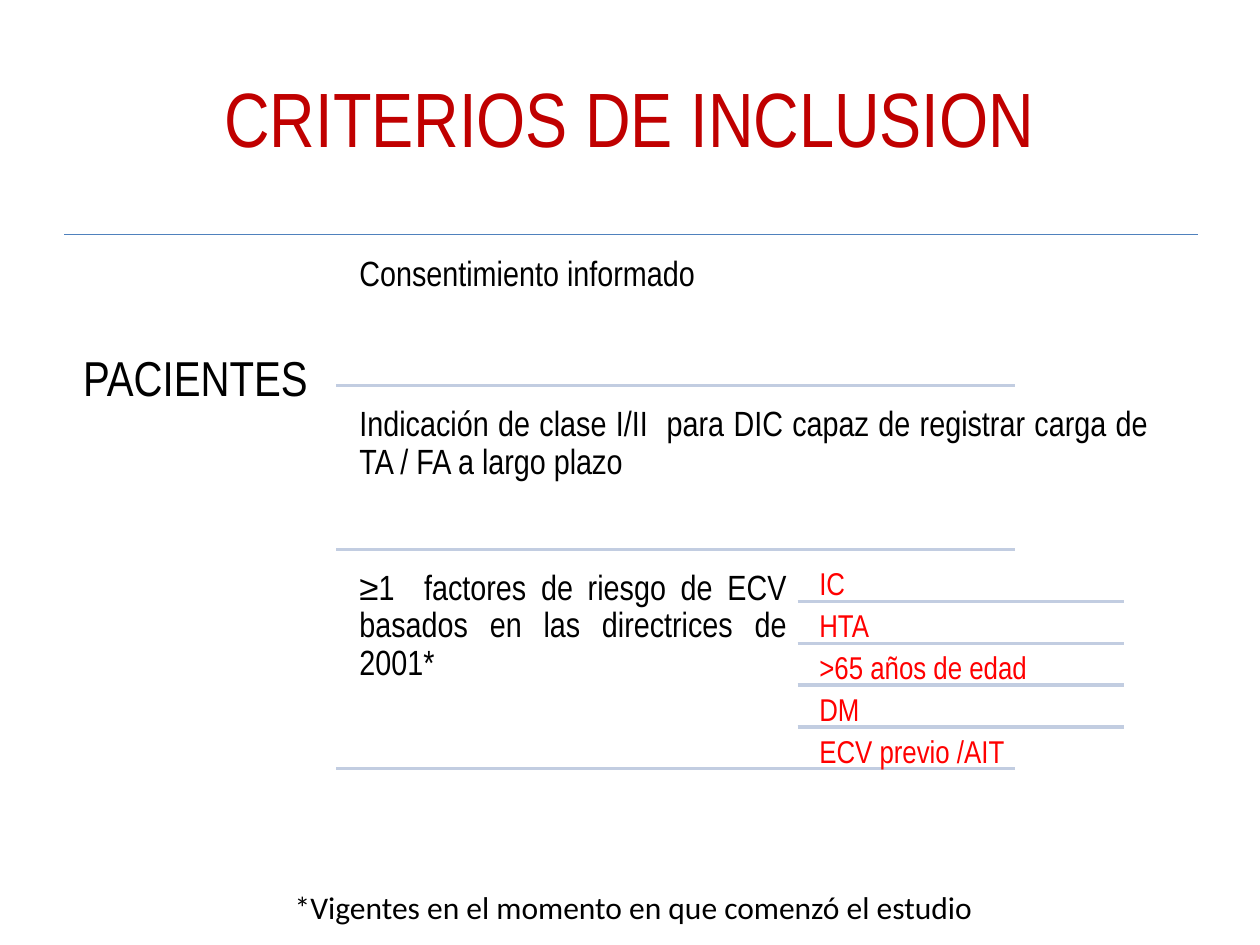
"""Build the inclusion criteria slide."""
from pptx import Presentation
from pptx.dml.color import RGBColor
from pptx.enum import shapes, text
from pptx.oxml.ns import qn
from pptx.util import Pt

INK = {"title": "C00000", "text": "000000", "risk": "FF0000",
       "top": "4F81BD", "rule": "C2CDE1"}
FACE = "Arial Narrow"
RISKS = ["IC", "HTA", ">65 años de edad", "DM", "ECV previo /AIT"]
ROWS = [
    ("Consentimiento informado", 140.4, 484.6, 79.9),
    ("Indicación de clase I/II  para DIC capaz de registrar carga de "
     "TA / FA a largo plazo", 226.1, 463, 87.8),
    ("≥1  factores de riesgo de ECV basados en las directrices de 2001*",
     319.7, 256.3, 119.5),
]


def style(par, size, ink, face=FACE):
    """Set the font of a paragraph."""
    font = par.font
    font.name, font.size = face, Pt(size)
    font.color.rgb = RGBColor.from_string(INK[ink])


def add_head(slide, words):
    """Fill and place the title."""
    head = slide.shapes.title
    head.left, head.top, head.width, head.height = map(Pt, (36, 21.6, 648, 90))
    frame = head.text_frame
    frame.text = words
    frame.vertical_anchor = text.MSO_ANCHOR.MIDDLE
    par = frame.paragraphs[0]
    par.alignment = text.PP_ALIGN.CENTER
    style(par, 44, "title")


def add_box(slide, words, area, size, pad, ink="text"):
    """Add a justified text box with equal insets."""
    box = slide.shapes.add_textbox(*map(Pt, area))
    frame = box.text_frame
    frame.word_wrap = True
    frame.margin_left = frame.margin_right = Pt(pad)
    frame.margin_top = frame.margin_bottom = Pt(pad)
    frame.text = words
    par = frame.paragraphs[0]
    par.alignment = text.PP_ALIGN.JUSTIFY
    par.line_spacing = 0.9
    style(par, size, ink)
    return frame


def add_rule(slide, left, top, width, ink="rule", weight=2):
    """Add a flat horizontal line."""
    line = slide.shapes.add_connector(
        shapes.MSO_CONNECTOR.STRAIGHT,
        Pt(left), Pt(top), Pt(left + width), Pt(top))
    line.line.color.rgb = RGBColor.from_string(INK[ink])
    line.line.width = Pt(weight)
    props = line._element.spPr
    props.append(props.makeelement(qn("a:effectLst"), {}))


def add_note(slide, words):
    """Add the footnote."""
    box = slide.shapes.add_textbox(Pt(161.3), Pt(504), Pt(416.9), Pt(29))
    frame = box.text_frame
    frame.word_wrap = True
    frame.text = words
    style(frame.paragraphs[0], 18, "text", "Calibri")


def main():
    """Build and save the slide."""
    deck = Presentation()
    deck.slide_width, deck.slide_height = Pt(720), Pt(540)
    slide = deck.slides.add_slide(deck.slide_layouts[5])
    add_head(slide, "CRITERIOS DE INCLUSION")
    add_rule(slide, 36.7, 133.9, 648, "top", 0.75)
    group = add_box(slide, "PACIENTES", (36.7, 133.9, 155.5, 311.8), 28, 10.8)
    group.margin_top = Pt(117)
    for words, top, width, height in ROWS:
        add_box(slide, words, (199.4, top, width, height), 20, 6)
        add_rule(slide, 192.2, top + height, 388.1)
    step = 23.95
    for i, risk in enumerate(RISKS):
        top = 319.7 + i * step
        add_box(slide, risk, (463, top, 186.5, step), 18, 5.2, "risk")
        if i:
            add_rule(slide, 455.8, top, 186.5)
    add_note(slide, "*Vigentes en el momento en que comenzó el estudio")
    deck.save("out.pptx")


if __name__ == "__main__":
    main()
